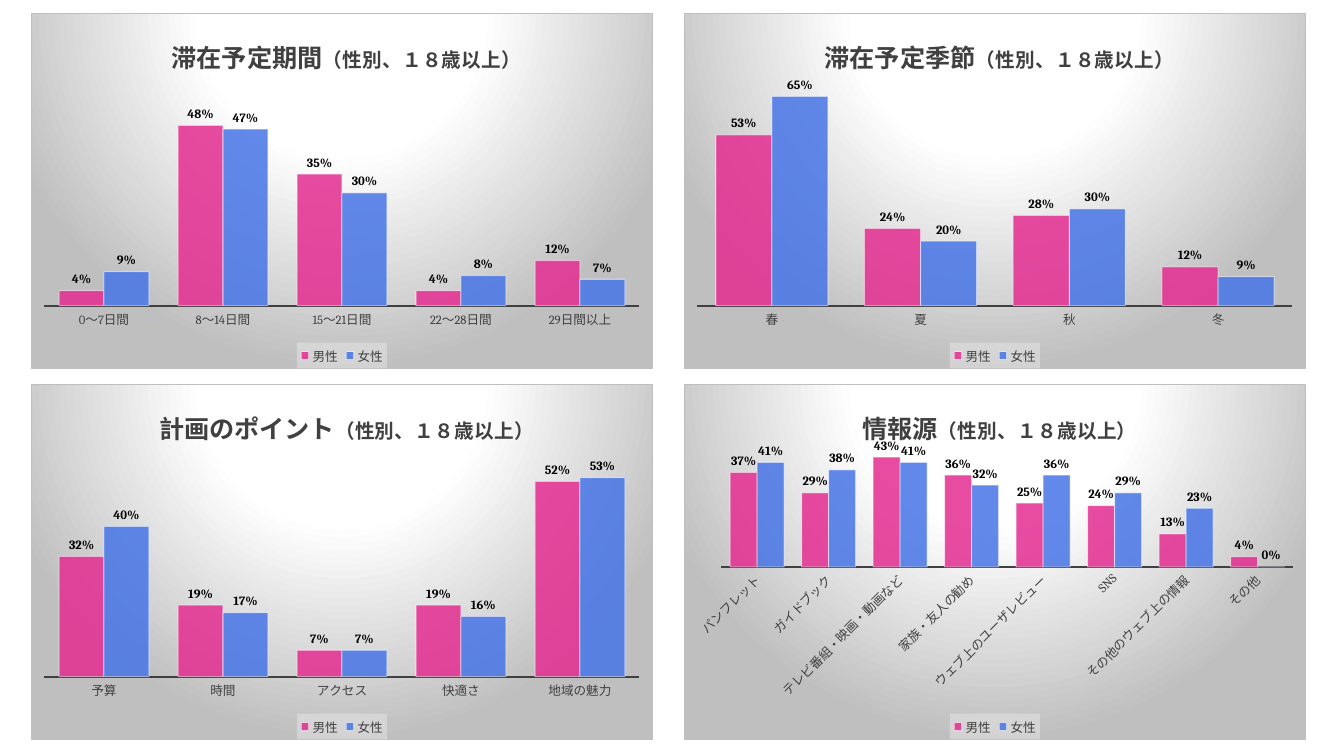
from pptx import Presentation
from pptx.chart.data import CategoryChartData
from pptx.dml.color import RGBColor
from pptx.enum.chart import XL_CHART_TYPE, XL_LABEL_POSITION, XL_LEGEND_POSITION, XL_TICK_MARK
from pptx.oxml import parse_xml
from pptx.oxml.ns import nsdecls, qn
from pptx.util import Emu, Pt

COLUMNS = XL_CHART_TYPE.COLUMN_CLUSTERED
OUTSIDE_END = XL_LABEL_POSITION.OUTSIDE_END
BOTTOM = XL_LEGEND_POSITION.BOTTOM
NO_TICKS = XL_TICK_MARK.NONE

EMU_PER_PX = 914400 / 100.8
SLIDE_WIDTH, SLIDE_HEIGHT = 1344, 756
CHART_WIDTH, CHART_HEIGHT = 622, 356
LEFT, TOP = 31, 13
COLUMN_STEP, ROW_STEP = 653, 371
TITLE_TOP = 20
TITLE_SIZE, SUBTITLE_SIZE = 18, 14
PX_PER_POINT = 1.4
WIDE_PLOT = (13, 67, 596, 226)
SHORT_PLOT = (37, 55, 573, 128)
FONT = "Cambria"
SUBTITLE = "（性別、１８歳以上）"
COLORS = {
    "male": "E32D91",
    "female": "4775E7",
    "text": "404040",
    "label": "000000",
    "white": "FFFFFF",
    "legend": "F2F2F2",
    "edge": "BFBFBF",
}
SERIES = (("男性", "male"), ("女性", "female"))

# column, row, title, categories, male and female shares, axis maximum, plot, label angle
CHARTS = [
    (0, 0, "滞在予定期間", ["0～7日間", "8～14日間", "15～21日間", "22～28日間", "29日間以上"],
     [0.04, 0.48, 0.35, 0.04, 0.12], [0.09, 0.47, 0.3, 0.08, 0.07], 0.6, WIDE_PLOT, 0),
    (0, 1, "計画のポイント", ["予算", "時間", "アクセス", "快適さ", "地域の魅力"],
     [0.32, 0.19, 0.07, 0.19, 0.52], [0.4, 0.17, 0.07, 0.16, 0.53], 0.6, WIDE_PLOT, 0),
    (1, 0, "滞在予定季節", ["春", "夏", "秋", "冬"],
     [0.53, 0.24, 0.28, 0.12], [0.65, 0.2, 0.3, 0.09], 0.7, WIDE_PLOT, 0),
    (1, 1, "情報源",
     ["パンフレット", "ガイドブック", "テレビ番組・映画・動画など", "家族・友人の勧め",
      "ウェブ上のユーザレビュー", "SNS", "その他のウェブ上の情報", "その他"],
     [0.37, 0.29, 0.43, 0.36, 0.25, 0.24, 0.13, 0.04],
     [0.41, 0.38, 0.41, 0.32, 0.36, 0.29, 0.23, 0], 0.5, SHORT_PLOT, -45),
]


def px(length):
    return Emu(round(length * EMU_PER_PX))


def rgb(name):
    return RGBColor.from_string(COLORS[name])


def style_font(font, size, color, bold=False):
    font.name = FONT
    font.size = Pt(size)
    font.bold = bold
    font.color.rgb = rgb(color)


def set_layout(element, index, left, top, width=None, height=None):
    """Place a title or the inner plot area by px within its chart."""
    for old in element.findall(qn("c:layout")):
        element.remove(old)
    target = '<c:layoutTarget val="inner"/>' if width else ""
    parts = [("x", left / CHART_WIDTH), ("y", top / CHART_HEIGHT)]
    if width:
        parts += [("w", width / CHART_WIDTH), ("h", height / CHART_HEIGHT)]
    modes = '<c:xMode val="edge"/><c:yMode val="edge"/>'
    values = "".join(f'<c:{name} val="{value:.4f}"/>' for name, value in parts)
    element.insert(index, parse_xml(
        f'<c:layout {nsdecls("c")}><c:manualLayout>{target}{modes}{values}'
        "</c:manualLayout></c:layout>"))


def add_background(chart):
    stops = "".join(
        f'<a:gs pos="{position * 1000}"><a:srgbClr val="{COLORS[color]}"/></a:gs>'
        for position, color in ((0, "white"), (39, "white"), (100, "edge")))
    chart.element.find(qn("c:chart")).addnext(parse_xml(
        f'<c:spPr {nsdecls("c", "a")}><a:gradFill><a:gsLst>{stops}</a:gsLst>'
        '<a:path path="circle"><a:fillToRect l="50000" t="-80000" r="50000" b="180000"/></a:path>'
        f'</a:gradFill><a:ln w="9525"><a:solidFill><a:srgbClr val="{COLORS["edge"]}"/>'
        "</a:solidFill></a:ln></c:spPr>"))


def add_title(chart, text):
    title = chart.chart_title
    para = title.text_frame.paragraphs[0]
    for words, size in ((text, TITLE_SIZE), (SUBTITLE, SUBTITLE_SIZE)):
        span = para.add_run()
        span.text = words
        style_font(span.font, size, "text", bold=True)
    width = PX_PER_POINT * (len(text) * TITLE_SIZE + len(SUBTITLE) * SUBTITLE_SIZE)
    title.include_in_layout = False
    set_layout(chart.element.xpath("./c:chart/c:title")[0], 1,
               (CHART_WIDTH - width) / 2, TITLE_TOP)


def add_legend(chart):
    chart.has_legend = True
    legend = chart.legend
    legend.position = BOTTOM
    legend.include_in_layout = False
    style_font(legend.font, 9, "text")
    chart.element.xpath(".//c:legend/c:txPr")[0].addprevious(parse_xml(
        f'<c:spPr {nsdecls("c", "a")}><a:solidFill><a:srgbClr val="{COLORS["legend"]}">'
        '<a:alpha val="39000"/></a:srgbClr></a:solidFill></c:spPr>'))


def style_axes(chart, maximum, angle):
    categories = chart.category_axis
    categories.major_tick_mark = categories.minor_tick_mark = NO_TICKS
    categories.has_major_gridlines = False
    style_font(categories.tick_labels.font, 9, "text")
    categories.format.line.color.rgb = rgb("text")
    categories.format.line.width = Pt(1.5)
    if angle:
        body = chart.element.xpath(".//c:catAx/c:txPr/a:bodyPr")[0]
        body.set("rot", str(angle * 60000))
    values = chart.value_axis
    values.minimum_scale, values.maximum_scale = 0, maximum
    values.has_major_gridlines = False
    values.tick_labels.number_format = "0%"
    values.tick_labels.number_format_is_linked = False
    values.visible = False


def style_series(chart):
    plot = chart.plots[0]
    plot.vary_by_categories = False
    plot.gap_width = 65
    plot.overlap = 0
    for series, (_, color) in zip(plot.series, SERIES):
        series.format.fill.solid()
        series.format.fill.fore_color.rgb = rgb(color)
        series.format.line.color.rgb = rgb("white")
        series.format.line.width = Pt(0.75)
        labels = series.data_labels
        labels.show_value = True
        labels.position = OUTSIDE_END
        labels.number_format = "0%"
        labels.number_format_is_linked = False
        style_font(labels.font, 9, "label", bold=True)
    for holder, percent in (("c:spPr", 85), ("c:spPr/a:ln", 50)):
        for color in chart.element.xpath(f".//c:ser/{holder}/a:solidFill/a:srgbClr"):
            color.append(parse_xml(f'<a:alpha {nsdecls("a")} val="{percent * 1000}"/>'))


def add_share_chart(page, column, row, title, categories, male, female, maximum, plot, angle):
    data = CategoryChartData(number_format="0%")
    data.categories = categories
    for (name, _), shares in zip(SERIES, (male, female)):
        data.add_series(name, shares)
    chart = page.shapes.add_chart(
        COLUMNS, px(LEFT + column * COLUMN_STEP), px(TOP + row * ROW_STEP),
        px(CHART_WIDTH), px(CHART_HEIGHT), data).chart
    style_font(chart.font, 10, "label")
    add_background(chart)
    add_title(chart, title)
    add_legend(chart)
    style_axes(chart, maximum, angle)
    style_series(chart)
    set_layout(chart.element.xpath(".//c:plotArea")[0], 0, *plot)


def main():
    deck = Presentation()
    deck.slide_width, deck.slide_height = px(SLIDE_WIDTH), px(SLIDE_HEIGHT)
    page = deck.slides.add_slide(deck.slide_layouts[6])
    for details in CHARTS:
        add_share_chart(page, *details)
    deck.save("out.pptx")


if __name__ == "__main__":
    main()
